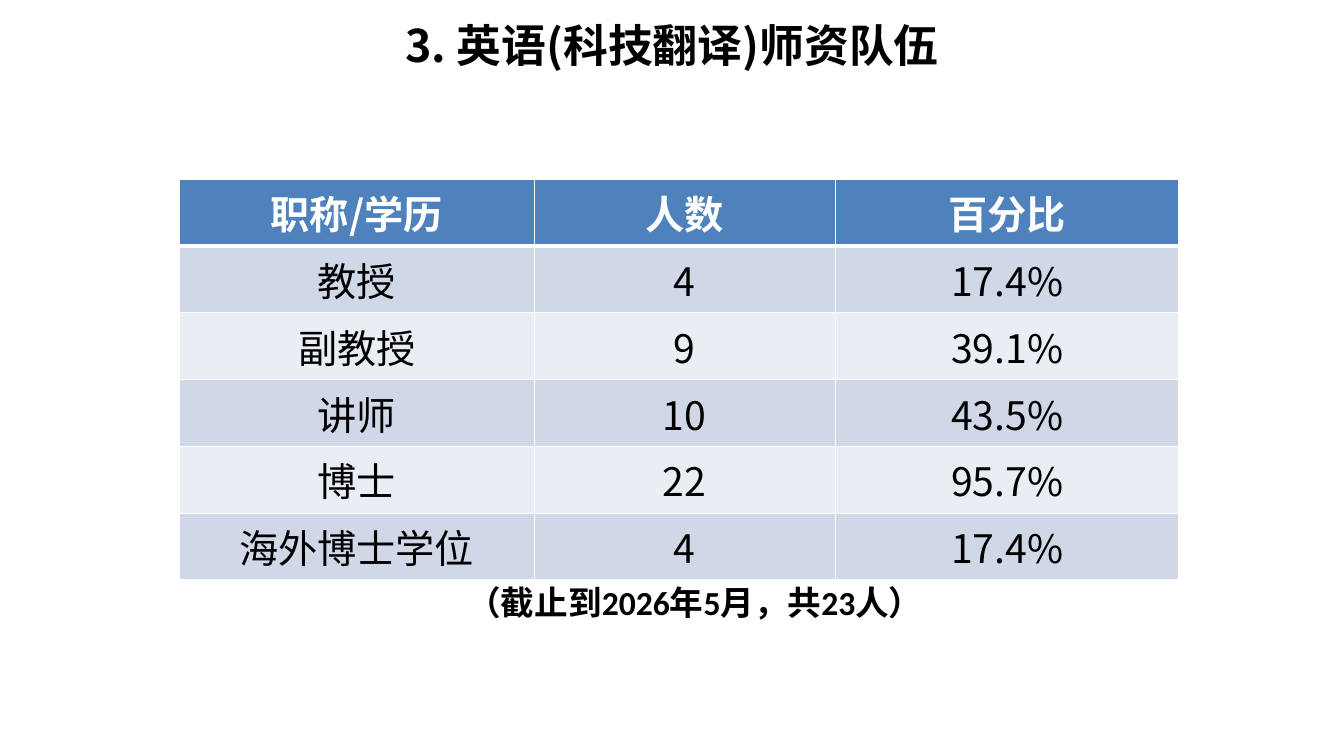
from lxml.etree import SubElement
from pptx import Presentation
from pptx.dml.color import RGBColor
from pptx.enum.text import MSO_ANCHOR as Anchor, PP_ALIGN as Align
from pptx.oxml.ns import qn
from pptx.util import Cm, Pt

BLACK = RGBColor(0x00, 0x00, 0x00)
WHITE = RGBColor(0xFF, 0xFF, 0xFF)
HEADER_BLUE = RGBColor(0x4F, 0x81, 0xBD)
BANDS = (RGBColor(0xD0, 0xD8, 0xE8), RGBColor(0xE9, 0xED, 0xF4))
CJK_FONT = "Noto Sans CJK SC"
NOTE_FONT = "Calibri"

STAFF = [
    ("职称/学历", "人数", "百分比"),
    ("教授", "4", "17.4%"),
    ("副教授", "9", "39.1%"),
    ("讲师", "10", "43.5%"),
    ("博士", "22", "95.7%"),
    ("海外博士学位", "4", "17.4%"),
]
COLUMN_WIDTHS = (8.94, 7.59, 8.66)
HEADER_HEIGHT, ROW_HEIGHT = 1.5, 1.57


def add_run(p, text, size, font=CJK_FONT, color=BLACK, bold=True):
    r = p.add_run()
    r.text = text
    r.font.size = Pt(size)
    r.font.name = font
    r.font.bold = bold
    r.font.color.rgb = color
    SubElement(r.font._element, qn("a:ea"), typeface=CJK_FONT)


def add_text(s, box, text, size, font=CJK_FONT, align=Align.LEFT, anchor=Anchor.TOP):
    tf = s.shapes.add_textbox(*map(Cm, box)).text_frame
    tf.word_wrap = True
    tf.vertical_anchor = anchor
    p = tf.paragraphs[0]
    p.alignment = align
    add_run(p, text, size, font)


def set_borders(cell, bottom):
    tc_pr = cell._tc.get_or_add_tcPr()
    for side, width in (("L", 1), ("R", 1), ("T", 1), ("B", bottom)):
        ln = SubElement(tc_pr, qn("a:ln" + side), w=str(Pt(width)))
        fill = SubElement(ln, qn("a:solidFill"))
        SubElement(fill, qn("a:srgbClr"), val=str(WHITE))


def add_staff_table(s, left, top):
    height = HEADER_HEIGHT + ROW_HEIGHT * (len(STAFF) - 1)
    table = s.shapes.add_table(
        len(STAFF), len(COLUMN_WIDTHS),
        Cm(left), Cm(top), Cm(sum(COLUMN_WIDTHS)), Cm(height)).table
    for column, width in zip(table.columns, COLUMN_WIDTHS):
        column.width = Cm(width)
    for i, values in enumerate(STAFF):
        header = i == 0
        table.rows[i].height = Cm(HEADER_HEIGHT if header else ROW_HEIGHT)
        for j, value in enumerate(values):
            cell = table.cell(i, j)
            set_borders(cell, bottom=3 if header else 1)
            cell.fill.solid()
            cell.fill.fore_color.rgb = HEADER_BLUE if header else BANDS[(i - 1) % 2]
            p = cell.text_frame.paragraphs[0]
            p.alignment = Align.CENTER
            add_run(p, value, 28, color=WHITE if header else BLACK, bold=header)


def build_staff_slide(prs):
    s = prs.slides.add_slide(prs.slide_layouts[6])
    # Staff numbers by rank and degree
    add_staff_table(s, 4.52, 4.52)
    # Date and total below the table
    add_text(s, (11.53, 14.53, 13.82, 1.27), "（截止到2026年5月，共23人）", 24, NOTE_FONT)
    # Title
    add_text(s, (1.7, 0.33, 30.48, 1.6), "3. 英语(科技翻译)师资队伍", 32,
             align=Align.CENTER, anchor=Anchor.MIDDLE)


def main():
    prs = Presentation()
    prs.slide_width, prs.slide_height = Cm(33.87), Cm(19.05)
    build_staff_slide(prs)
    prs.save("out.pptx")


if __name__ == "__main__":
    main()
